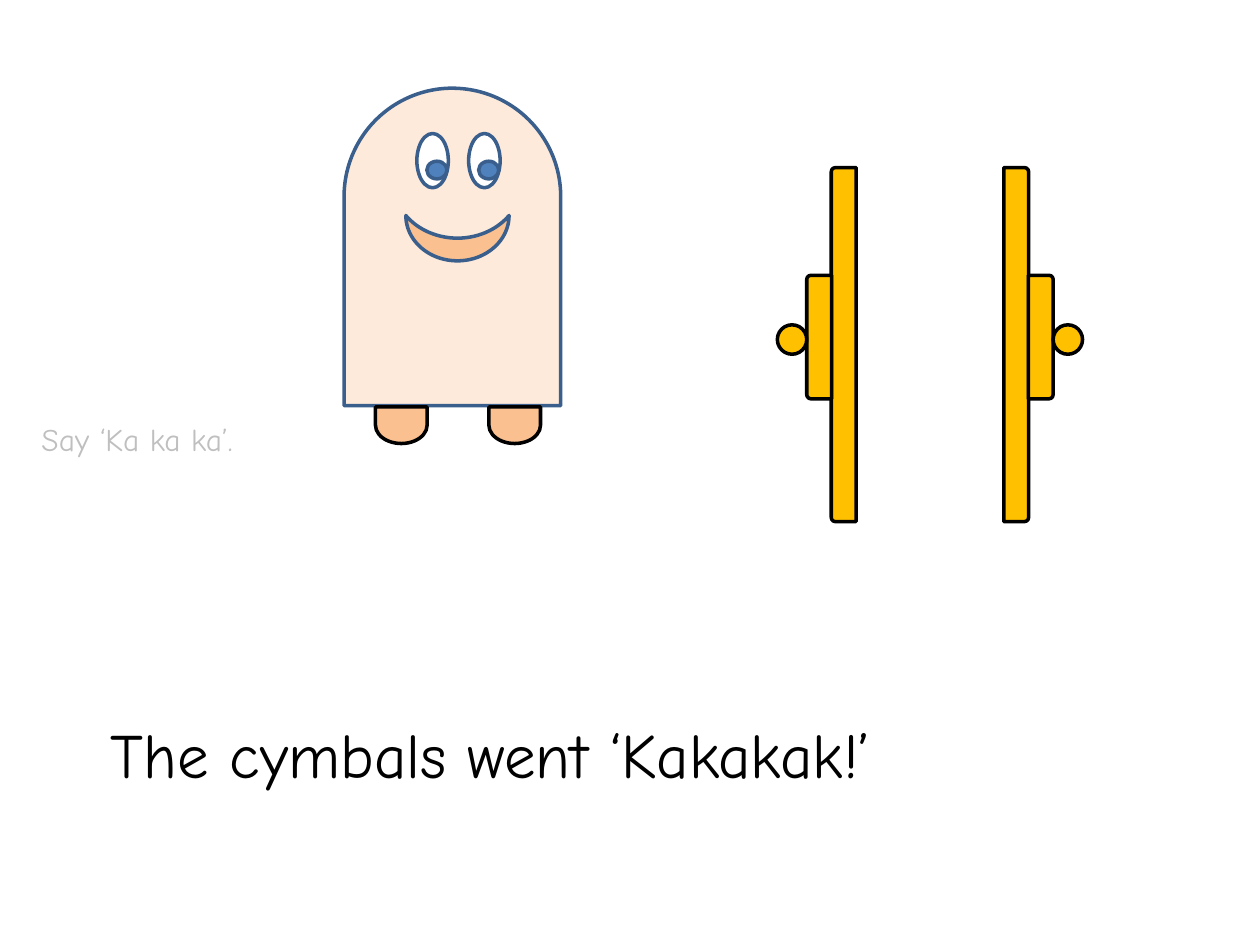
import dataclasses

import pptx
import pptx.dml.color
import pptx.enum.shapes
import pptx.enum.text
import pptx.util

Pt = pptx.util.Pt
SHAPES = pptx.enum.shapes.MSO_SHAPE


@dataclasses.dataclass(frozen=True)
class Theme:
    skin: str = "FDEADA"
    peach: str = "FAC090"
    white: str = "FFFFFF"
    blue: str = "4F81BD"
    outline: str = "3A5F8C"
    brass: str = "FFC000"
    black: str = "000000"
    grey: str = "BFBFBF"
    font: str = "Comic Neue"
    hint_size: float = 18
    story_size: float = 36
    line_width: float = 2


THEME = Theme()


def color(value):
    return pptx.dml.color.RGBColor.from_string(value)


def add_part(group, kind, center, size, fill, line, rotation=0):
    """Add an outlined shape around its center; size is before rotation."""
    (x, y), (width, height) = center, size
    shape = group.shapes.add_shape(
        kind, Pt(x - width / 2), Pt(y - height / 2), Pt(width), Pt(height))
    shape.rotation = rotation
    shape.shadow.inherit = False
    shape.fill.solid()
    shape.fill.fore_color.rgb = color(fill)
    shape.line.color.rgb = color(line)
    shape.line.width = Pt(THEME.line_width)
    return shape


def add_text(slide, left, top, width, height, text, size, text_color):
    box = slide.shapes.add_textbox(Pt(left), Pt(top), Pt(width), Pt(height))
    frame = box.text_frame
    frame.word_wrap = True
    frame.auto_size = pptx.enum.text.MSO_AUTO_SIZE.SHAPE_TO_FIT_TEXT
    run = frame.paragraphs[0].add_run()
    run.text = text
    run.font.name = THEME.font
    run.font.size = Pt(size)
    run.font.color.rgb = color(text_color)


def add_character(slide):
    group = slide.shapes.add_group_shape()
    # Body and mouth
    body = add_part(group, SHAPES.ROUND_2_SAME_RECTANGLE, (258.5, 141.1),
                    (123.8, 181.4), THEME.skin, THEME.outline)
    body.adjustments[0] = 0.5
    body.adjustments[1] = 0
    add_part(group, SHAPES.MOON, (261.4, 136.1), (25.9, 59),
             THEME.peach, THEME.outline, 270)
    # Eyes with pupils
    for x in (247.2, 276.8):
        add_part(group, SHAPES.OVAL, (x, 91.8), (18, 31),
                 THEME.white, THEME.outline)
        add_part(group, SHAPES.OVAL, (x + 2.5, 97.2), (11.5, 10.1),
                 THEME.blue, THEME.outline)
    # Feet
    for x in (229.3, 294.1):
        add_part(group, SHAPES.FLOWCHART_DELAY, (x, 243), (20.9, 29.5),
                 THEME.peach, THEME.black, 90)


def add_cymbal(slide, side):
    """Add one cymbal; side is -1 for left and 1 for right of the axis."""
    axis = 531.4
    rotation = side * 90 % 360
    group = slide.shapes.add_group_shape()
    # Plate and dome
    for offset, y, length in ((49.3, 196.9, 202.3), (63.3, 192.6, 70.6)):
        add_part(group, SHAPES.ROUND_2_SAME_RECTANGLE,
                 (axis + side * offset, y), (length, 14.2),
                 THEME.brass, THEME.black, rotation)
    # Knob
    add_part(group, SHAPES.OVAL, (axis + side * 78.8, 194), (16.8, 16.8),
             THEME.brass, THEME.black)


def main():
    presentation = pptx.Presentation()
    presentation.slide_width = Pt(720)
    presentation.slide_height = Pt(540)
    slide = presentation.slides.add_slide(presentation.slide_layouts[6])

    add_character(slide)
    add_text(slide, 16.6, 236.2, 126, 51, "Say ‘Ka ka ka’.",
             THEME.hint_size, THEME.grey)
    add_text(slide, 56.2, 405.4, 607.7, 51, "The cymbals went ‘Kakakak!’",
             THEME.story_size, THEME.black)
    for side in (-1, 1):
        add_cymbal(slide, side)

    presentation.save("out.pptx")


if __name__ == "__main__":
    main()
